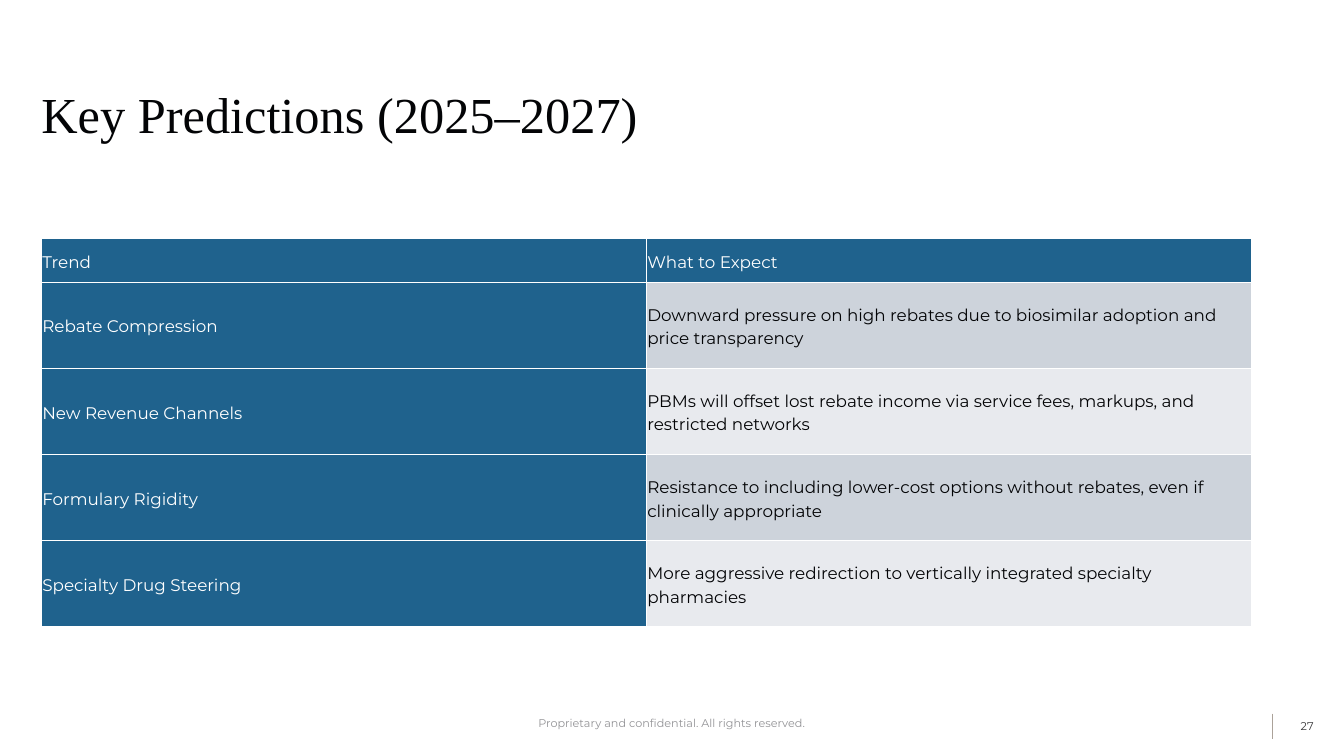
import pptx
import pptx.dml.color
import pptx.enum.shapes
import pptx.enum.text
import pptx.oxml
import pptx.oxml.ns
import pptx.util
from pptx.util import Inches

ALIGN = pptx.enum.text.PP_ALIGN
ANCHOR = pptx.enum.text.MSO_ANCHOR
INK, WHITE, BLUE = "030406", "FFFFFF", "1F628D"
BANDS = ["CDD3DB", "E8EAEE"]
HEADER_HEIGHT = 0.43
TABLE_HEIGHT = 3.85

PREDICTIONS = [
    ("Trend", "What to Expect"),
    ("Rebate Compression",
     "Downward pressure on high rebates due to biosimilar adoption and price transparency"),
    ("New Revenue Channels",
     "PBMs will offset lost rebate income via service fees, markups, and restricted networks"),
    ("Formulary Rigidity",
     "Resistance to including lower-cost options without rebates, even if clinically appropriate"),
    ("Specialty Drug Steering",
     "More aggressive redirection to vertically integrated specialty pharmacies"),
]


def color(value):
    return pptx.dml.color.RGBColor.from_string(value)


def style_font(paragraph, size, value, name="Montserrat"):
    paragraph.font.size = pptx.util.Pt(size)
    paragraph.font.name = name
    paragraph.font.color.rgb = color(value)


def set_margins(target, left, top, right, bottom):
    target.margin_left, target.margin_top = Inches(left), Inches(top)
    target.margin_right, target.margin_bottom = Inches(right), Inches(bottom)


def add_title(slide, text):
    title = slide.shapes.title
    title.left, title.top = Inches(0.41), Inches(0.27)
    title.width, title.height = Inches(12), Inches(1.2)
    frame = title.text_frame
    frame.text = text
    frame.vertical_anchor = ANCHOR.BOTTOM
    frame.auto_size = pptx.enum.text.MSO_AUTO_SIZE.NONE
    set_margins(frame, 0, 0.05, 0, 0.05)
    frame.paragraphs[0].alignment = ALIGN.LEFT
    style_font(frame.paragraphs[0], 36, INK, "Times New Roman")


def add_label(slide, text, left, top, width, height, alignment, value):
    box = slide.shapes.add_textbox(Inches(left), Inches(top), Inches(width), Inches(height))
    frame = box.text_frame
    frame.text = text
    frame.word_wrap = False
    frame.vertical_anchor = ANCHOR.MIDDLE
    set_margins(frame, 0, 0, 0, 0)
    frame.paragraphs[0].alignment = alignment
    style_font(frame.paragraphs[0], 8, value)


def add_divider(slide, x, top, bottom):
    line = slide.shapes.add_connector(
        pptx.enum.shapes.MSO_CONNECTOR.STRAIGHT,
        Inches(x), Inches(top), Inches(x), Inches(bottom))
    line.line.color.rgb = color("ABA299")
    line.line.width = pptx.util.Pt(0.5)
    line._element.spPr.append(pptx.oxml.parse_xml(
        f'<a:effectLst {pptx.oxml.ns.nsdecls("a")}/>'))


def add_borders(cell, value, points):
    properties = cell._tc.get_or_add_tcPr()
    for side in "LRTB":
        properties.append(pptx.oxml.parse_xml(
            f'<a:ln{side} {pptx.oxml.ns.nsdecls("a")} w="{pptx.util.Pt(points)}">'
            f'<a:solidFill><a:srgbClr val="{value}"/></a:solidFill></a:ln{side}>'))


def fill_cell(cell, text, fill, ink):
    add_borders(cell, WHITE, 1)
    cell.fill.solid()
    cell.fill.fore_color.rgb = color(fill)
    cell.vertical_anchor = ANCHOR.MIDDLE
    set_margins(cell, 0.01, 0.01, 0.01, 0.01)
    cell.text = text
    paragraph = cell.text_frame.paragraphs[0]
    paragraph.line_spacing = 1.15
    paragraph.space_after = pptx.util.Pt(8)
    style_font(paragraph, 12, ink)


def add_predictions_table(slide, rows):
    table = slide.shapes.add_table(
        len(rows), 2, Inches(0.41), Inches(2.37), Inches(12), Inches(TABLE_HEIGHT)).table
    body_height = (TABLE_HEIGHT - HEADER_HEIGHT) / (len(rows) - 1)
    for row_index, texts in enumerate(rows):
        table.rows[row_index].height = Inches(body_height if row_index else HEADER_HEIGHT)
        for column_index, text in enumerate(texts):
            is_heading = row_index == 0 or column_index == 0
            fill = BLUE if is_heading else BANDS[(row_index - 1) % 2]
            fill_cell(table.cell(row_index, column_index), text, fill,
                      WHITE if is_heading else INK)


def main():
    presentation = pptx.Presentation()
    presentation.slide_width, presentation.slide_height = Inches(13.33), Inches(7.5)
    slide = presentation.slides.add_slide(presentation.slide_layouts[5])
    add_title(slide, "Key Predictions (2025–2027)")
    add_predictions_table(slide, PREDICTIONS)
    add_label(slide, "Proprietary and confidential. All rights reserved.",
              5.33, 7.11, 2.67, 0.13, ALIGN.CENTER, "939396")
    add_divider(slide, 12.62, 7.08, 7.33)
    add_label(slide, "27", 12.63, 7.08, 0.4, 0.25, ALIGN.RIGHT, "39393B")
    presentation.save("out.pptx")


if __name__ == "__main__":
    main()
